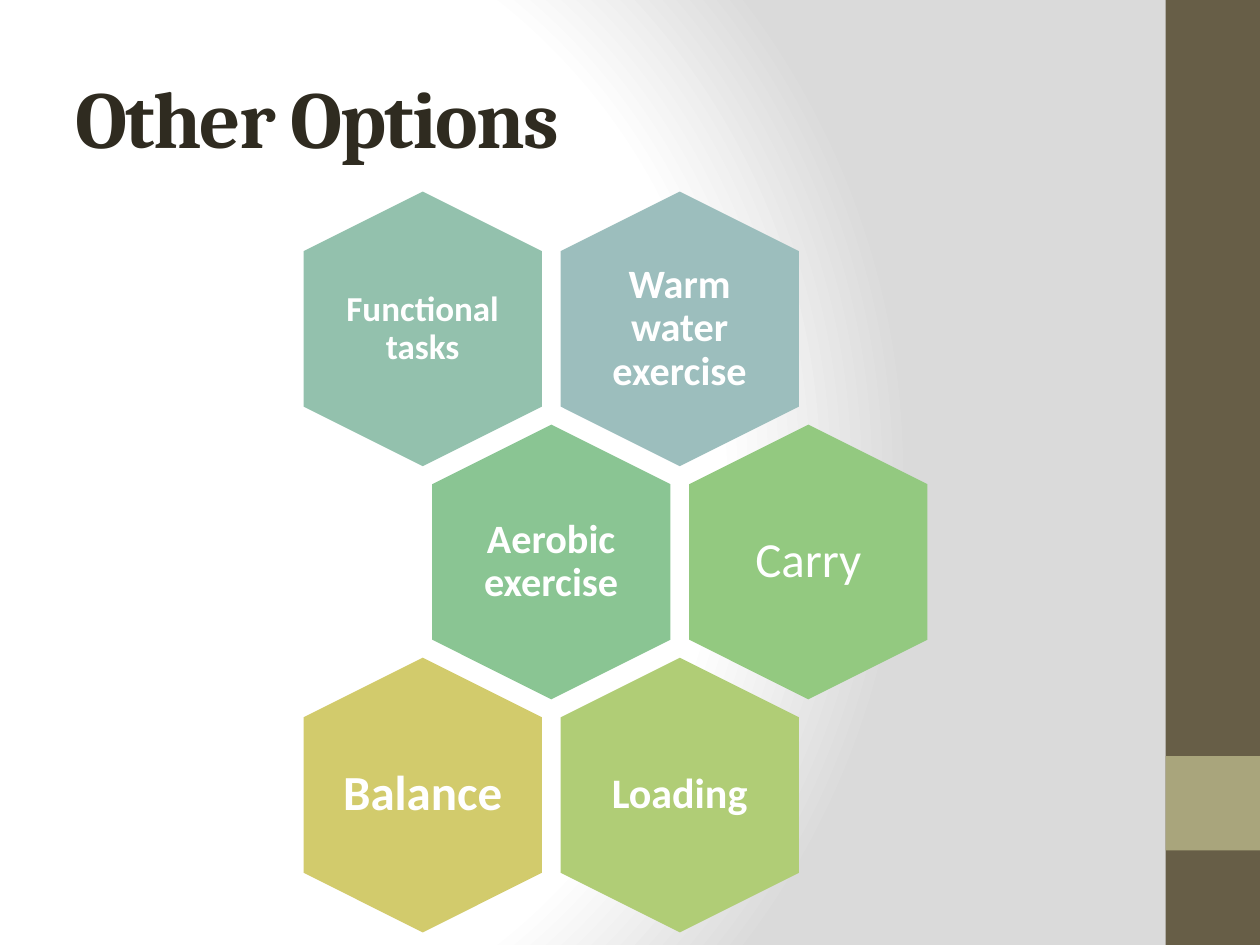
from dataclasses import dataclass

from pptx import Presentation
from pptx.dml.color import RGBColor
from pptx.enum.shapes import MSO_SHAPE
from pptx.enum.text import MSO_ANCHOR, PP_ALIGN
from pptx.oxml import parse_xml
from pptx.oxml.ns import nsdecls
from pptx.util import Inches, Pt

RECT, HEX = MSO_SHAPE.RECTANGLE, MSO_SHAPE.HEXAGON
MIDDLE = MSO_ANCHOR.MIDDLE
LEFT, CENTER = PP_ALIGN.LEFT, PP_ALIGN.CENTER
WIDE, HIGH = 10, 7.5


@dataclass(frozen=True)
class Theme:
    """Colours, fonts and type sizes of the slide."""
    ink: str = "2F2B20"
    light: str = "FFFFFF"
    shade: str = "DADADA"
    band: str = "675E47"
    mark: str = "A9A57C"
    head: str = "Cambria"
    body: str = "Calibri"
    title: int = 46
    small: int = 20
    mid: int = 23
    loud: int = 24
    large: int = 28


THEME = Theme()

ROWS = [
    [("Functional tasks", "93C1AD", THEME.small, True, 0),
     ("Warm water exercise", "9CBEBD", THEME.mid, True, 0.1)],
    [("Aerobic exercise", "8AC593", THEME.mid, True, 0.1),
     ("Carry", "93C980", THEME.large, False, 0)],
    [("Balance", "D2CB6C", THEME.large, True, 0),
     ("Loading", "B0CD76", THEME.loud, True, 0.1)],
]


def add_form(shapes, kind, box, color):
    """Add a plain filled shape in the box."""
    form = shapes.add_shape(kind, *map(Inches, box))
    form.shadow.inherit = False
    form.fill.solid()
    form.fill.fore_color.rgb = RGBColor.from_string(color)
    form.line.fill.background()
    return form


def add_text(shapes, box, words, face, size, color, bold, align, pads):
    """Add a middle-anchored text box and return its paragraph and run."""
    frame = shapes.add_textbox(*map(Inches, box)).text_frame
    frame.word_wrap = True
    frame.vertical_anchor = MIDDLE
    frame.margin_left = frame.margin_right = Inches(pads[0])
    frame.margin_top = frame.margin_bottom = Inches(pads[1])
    para = frame.paragraphs[0]
    para.alignment = align
    run = para.add_run()
    run.text = words
    font = run.font
    font.name, font.size, font.bold = face, Pt(size), bold
    font.color.rgb = RGBColor.from_string(color)
    return para, run


def paint_back(slide):
    """Fill the background with a round gradient."""
    stops = [(0, THEME.light), (75, THEME.light), (100, THEME.shade)]
    marks = "".join(
        f'<a:gs pos="{pos * 1000}"><a:srgbClr val="{color}"/></a:gs>'
        for pos, color in stops)
    back = parse_xml(
        f'<p:bg {nsdecls("p", "a")}><p:bgPr><a:gradFill rotWithShape="1">'
        f'<a:gsLst>{marks}</a:gsLst><a:path path="circle">'
        '<a:fillToRect l="20000" t="50000" r="100000" b="50000"/></a:path>'
        '</a:gradFill><a:effectLst/></p:bgPr></p:bg>')
    slide.element.cSld.insert(0, back)


def draw_side(slide, box):
    """Draw the side band with its square mark four fifths down."""
    left, top, width, height = box
    add_form(slide.shapes, RECT, box, THEME.band)
    square = (left, top + height * 0.8, width, width)
    add_form(slide.shapes, RECT, square, THEME.mark)


def draw_title(slide, box):
    """Write the tightly spaced title."""
    run = add_text(slide.shapes, box, "Other Options", THEME.head,
                   THEME.title, THEME.ink, True, LEFT, (0.1, 0.05))[1]
    run.font._element.set("spc", "-100")


def draw_cell(shapes, mid_x, mid_y, size, cell):
    """Draw an upright hexagon with its label around a centre."""
    words, color, points, bold, pad = cell
    long, short = size
    box = (mid_x - long / 2, mid_y - short / 2, long, short)
    form = add_form(shapes, HEX, box, color)
    form.rotation = 90
    form.adjustments[0] = 0.25
    wide, high = 1.3, 1.5
    area = (mid_x - wide / 2, mid_y - high / 2, wide, high)
    para = add_text(shapes, area, words, THEME.body, points, THEME.light,
                    bold, CENTER, (pad, pad))[0]
    para.line_spacing = 0.9


def draw_comb(slide, box):
    """Lay out the hexagons in rows, every second one shifted half a step."""
    left, top, width, height = box
    long, short = 2.18, 1.89
    step_x = (width - short) / 2.4 if len(ROWS) < 2 else (width - short) / 1.5
    step_y = (height - long) / (len(ROWS) - 1)
    shapes = slide.shapes.add_group_shape().shapes
    for row, cells in enumerate(ROWS):
        for col, cell in enumerate(cells):
            mid_x = left + short / 2 + (col + row % 2 / 2) * step_x
            mid_y = top + long / 2 + row * step_y
            draw_cell(shapes, mid_x, mid_y, (long, short), cell)


def main():
    """Build the slide and save it."""
    deck = Presentation()
    deck.slide_width, deck.slide_height = Inches(WIDE), Inches(HIGH)
    slide = deck.slides.add_slide(deck.slide_layouts[6])
    paint_back(slide)
    draw_side(slide, (WIDE * 0.925, 0, WIDE * 0.075, HIGH))
    draw_title(slide, (WIDE * 0.05, HIGH * 0.04, 8.33, 1.25))
    draw_comb(slide, (2.41, 1.52, 4.95, 5.88))
    deck.save("out.pptx")


if __name__ == "__main__":
    main()
